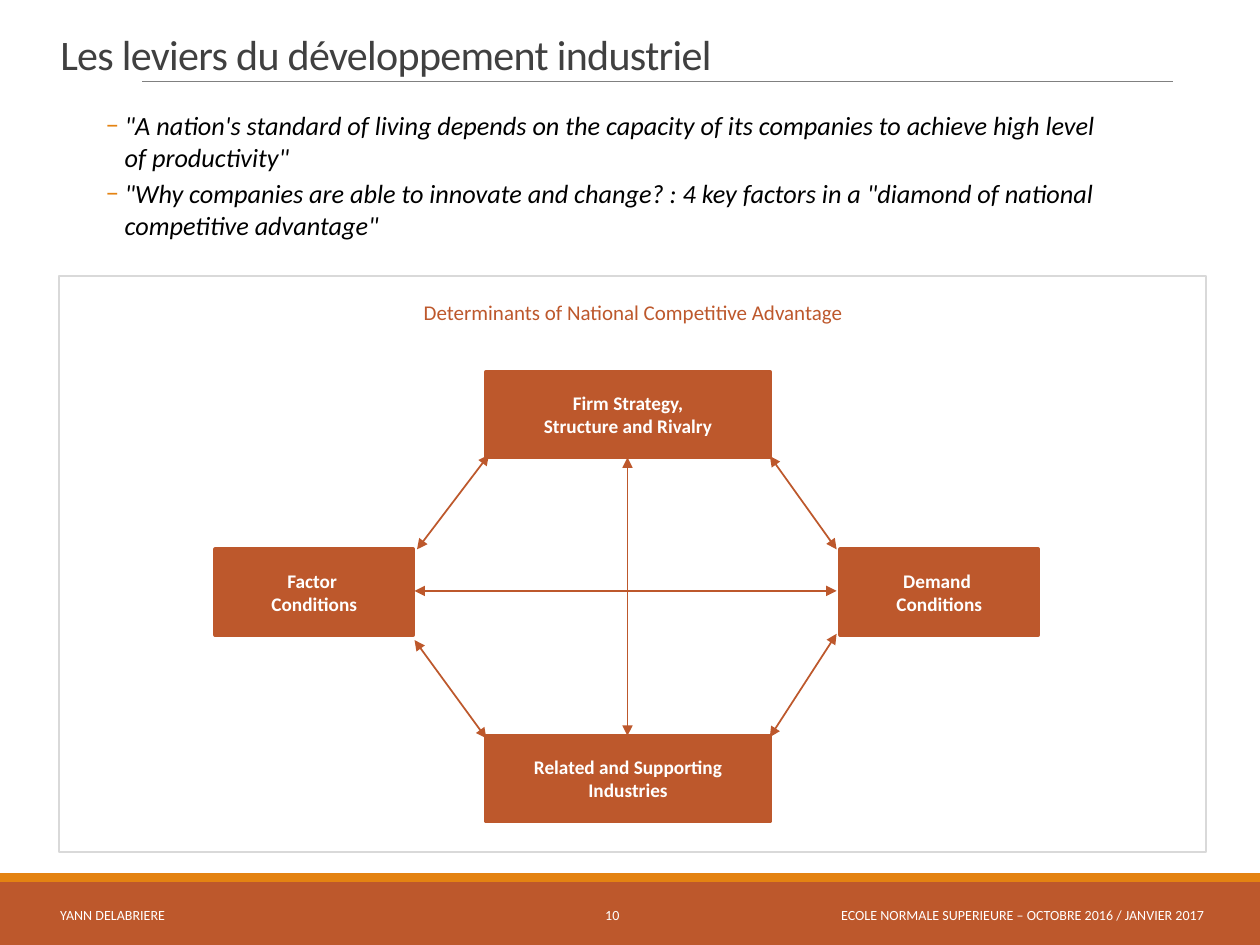
from lxml.etree import SubElement
from pptx import Presentation
from pptx.dml.color import RGBColor
from pptx.enum.shapes import MSO_CONNECTOR, MSO_SHAPE
from pptx.enum.text import MSO_ANCHOR, PP_ALIGN
from pptx.oxml.ns import qn
from pptx.util import Inches, Pt

COLORS = {
    "rust": "BD582C", "orange": "E48312", "rule": "808080", "frame": "D9D9D9",
    "title": "404040", "black": "000000", "white": "FFFFFF",
}


class SlideBuilder:
    """Holds the style and the current slide."""

    font = "Calibri"

    def __init__(self, slide):
        self.s = slide

    def color(self, name):
        return RGBColor.from_string(COLORS[name])

    def rect(self, x, y, w, h, fill=None, line=None, width=1):
        sp = self.s.shapes.add_shape(
            MSO_SHAPE.RECTANGLE, Inches(x), Inches(y), Inches(w), Inches(h))
        sp.shadow.inherit = False
        if fill:
            sp.fill.solid()
            sp.fill.fore_color.rgb = self.color(fill)
        else:
            sp.fill.background()
        if line:
            sp.line.color.rgb = self.color(line)
            sp.line.width = Pt(width)
        else:
            sp.line.fill.background()
        return sp

    def line(self, start, end, color, width, arrows=False):
        ends = [Inches(v) for v in (*start, *end)]
        cn = self.s.shapes.add_connector(MSO_CONNECTOR.STRAIGHT, *ends)
        cn.line.color.rgb = self.color(color)
        cn.line.width = Pt(width)
        if arrows:
            ln = cn._element.spPr.find(qn("a:ln"))
            for tag in ("a:headEnd", "a:tailEnd"):
                SubElement(ln, qn(tag), type="triangle")
        SubElement(cn._element.spPr, qn("a:effectLst"))

    def add_runs(self, p, text, size, color, align=PP_ALIGN.LEFT,
                 bold=False, italic=False, spacing=None):
        p.alignment = align
        for i, part in enumerate(text.split("\n")):
            if i:
                p.add_line_break()
            r = p.add_run()
            r.text = part
            r.font.name = self.font
            r.font.size = Pt(size)
            r.font.bold = bold
            r.font.italic = italic
            r.font.color.rgb = self.color(color)
            if spacing:
                r._r.get_or_add_rPr().set("spc", str(round(spacing * 100)))

    def frame(self, x, y, w, h, anchor=MSO_ANCHOR.TOP):
        sp = self.s.shapes.add_textbox(Inches(x), Inches(y), Inches(w), Inches(h))
        tf = sp.text_frame
        tf.word_wrap = True
        tf.vertical_anchor = anchor
        return tf

    def text(self, x, y, w, h, text, size, color, anchor=MSO_ANCHOR.MIDDLE,
             line_spacing=None, **style):
        p = self.frame(x, y, w, h, anchor).paragraphs[0]
        p.line_spacing = line_spacing
        self.add_runs(p, text, size, color, **style)

    def box(self, x, y, w, h, text):
        sp = self.rect(x, y, w, h, "rust", "rust", 2.25)
        tf = sp.text_frame
        tf.word_wrap = True
        tf.vertical_anchor = MSO_ANCHOR.MIDDLE
        self.add_runs(tf.paragraphs[0], text, 11, "white", PP_ALIGN.CENTER, bold=True)

    def bullets(self, x, y, w, h, items):
        tf = self.frame(x, y, w, h)
        tf.margin_left = tf.margin_right = 0
        for i, item in enumerate(items):
            p = tf.add_paragraph() if i else tf.paragraphs[0]
            if i:
                p.space_before = Pt(3)
            pPr = p._p.get_or_add_pPr()
            pPr.set("marL", str(Inches(0.61)))
            pPr.set("indent", str(Inches(-0.15)))
            clr = SubElement(pPr, qn("a:buClr"))
            SubElement(clr, qn("a:srgbClr"), val=COLORS["orange"])
            SubElement(pPr, qn("a:buFont"), typeface=self.font)
            SubElement(pPr, qn("a:buChar"), char="−")
            self.add_runs(p, item, 15, "black", italic=True)


def main():
    prs = Presentation()
    prs.slide_width, prs.slide_height = Inches(10), Inches(7.5)
    b = SlideBuilder(prs.slides.add_slide(prs.slide_layouts[6]))

    # Footer bands and title rule
    b.rect(0, 7, 10, 0.5, "rust")
    b.rect(0, 6.93, 10, 0.07, "orange")
    b.line((1.13, 0.65), (9.31, 0.65), "rule", 0.5)

    # Title and quotations
    b.text(0.38, 0.04, 9.62, 0.64, "Les leviers du développement industriel",
           24, "title", MSO_ANCHOR.BOTTOM, line_spacing=0.85, spacing=-0.4)
    b.bullets(0.38, 0.82, 9.19, 1.16, [
        "\"A nation's standard of living depends on the capacity of its companies "
        "to achieve high level\nof productivity\"",
        "\"Why companies are able to innovate and change? : 4 key factors in a "
        "\"diamond of national competitive advantage\"",
    ])

    # Footer texts
    for x, w, text, align in (
        (0.38, 2.76, "YANN DELABRIERE", PP_ALIGN.LEFT),
        (4.32, 1.08, "10", PP_ALIGN.CENTER),
        (6.37, 3.29, "ECOLE NORMALE SUPERIEURE – OCTOBRE 2016 / JANVIER 2017",
         PP_ALIGN.RIGHT),
    ):
        b.text(x, 7.06, w, 0.4, text, 8, "white", align=align)

    # Diagram frame and heading
    b.rect(0.47, 2.19, 9.1, 4.57, line="frame")
    b.text(2.58, 2.33, 4.89, 0.3, "Determinants of National Competitive Advantage",
           12, "rust", MSO_ANCHOR.TOP, align=PP_ALIGN.CENTER)

    # Arrows between the four factors
    for start, end in (
        ((3.29, 4.69), (6.64, 4.69)),
        ((4.98, 5.84), (4.98, 3.63)),
        ((3.31, 4.36), (3.88, 3.61)),
        ((6.64, 4.36), (6.11, 3.62)),
        ((6.64, 5.03), (6.11, 5.85)),
        ((3.29, 5.08), (3.86, 5.86)),
    ):
        b.line(start, end, "rust", 1, arrows=True)

    # The four factors of the diamond
    for x, y, w, text in (
        (3.86, 2.95, 2.25, "Firm Strategy,\nStructure and Rivalry"),
        (1.71, 4.36, 1.57, "Factor \nConditions"),
        (6.67, 4.36, 1.57, "Demand \nConditions"),
        (3.86, 5.84, 2.25, "Related and Supporting Industries"),
    ):
        b.box(x, y, w, 0.68, text)

    prs.save("out.pptx")


if __name__ == "__main__":
    main()
